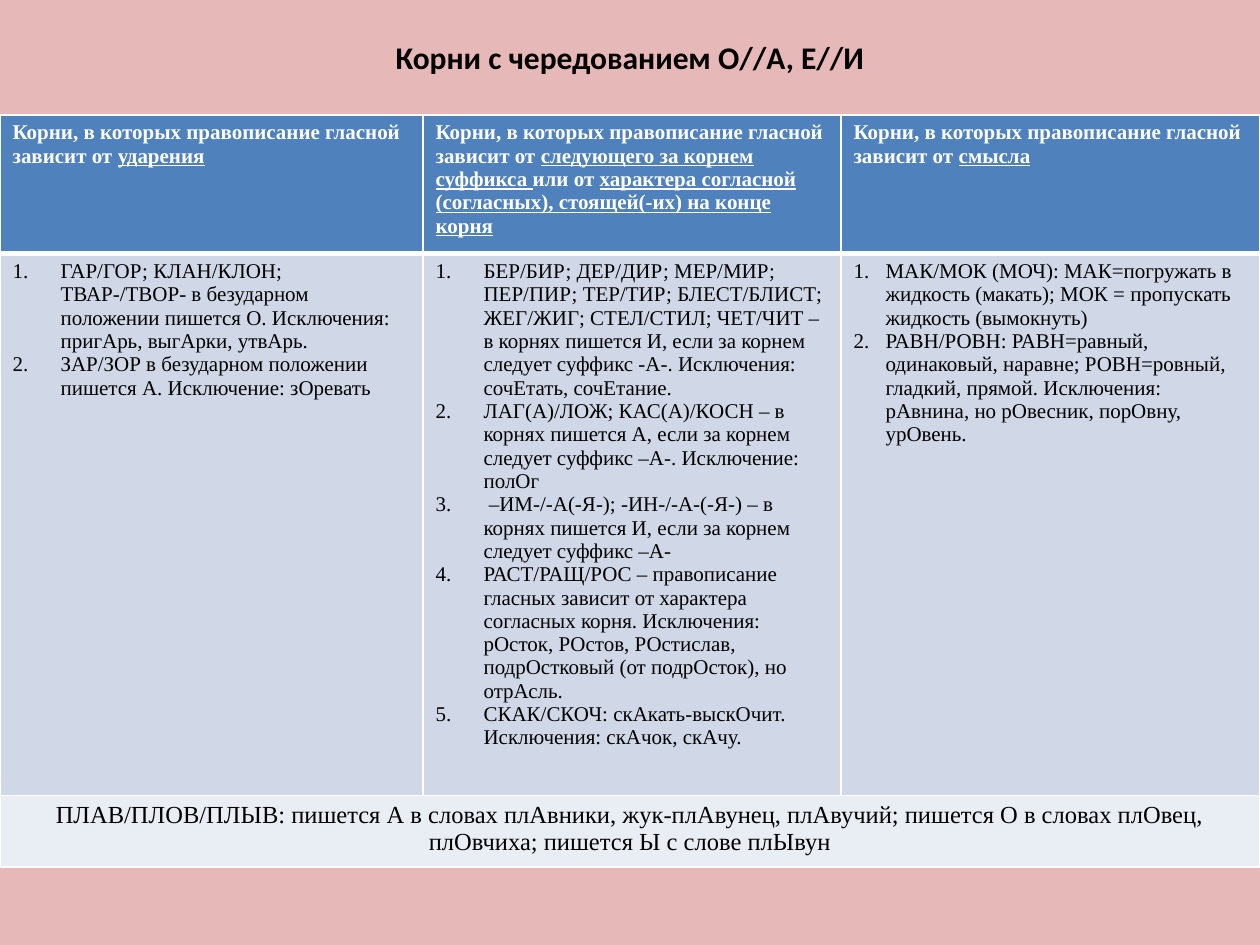
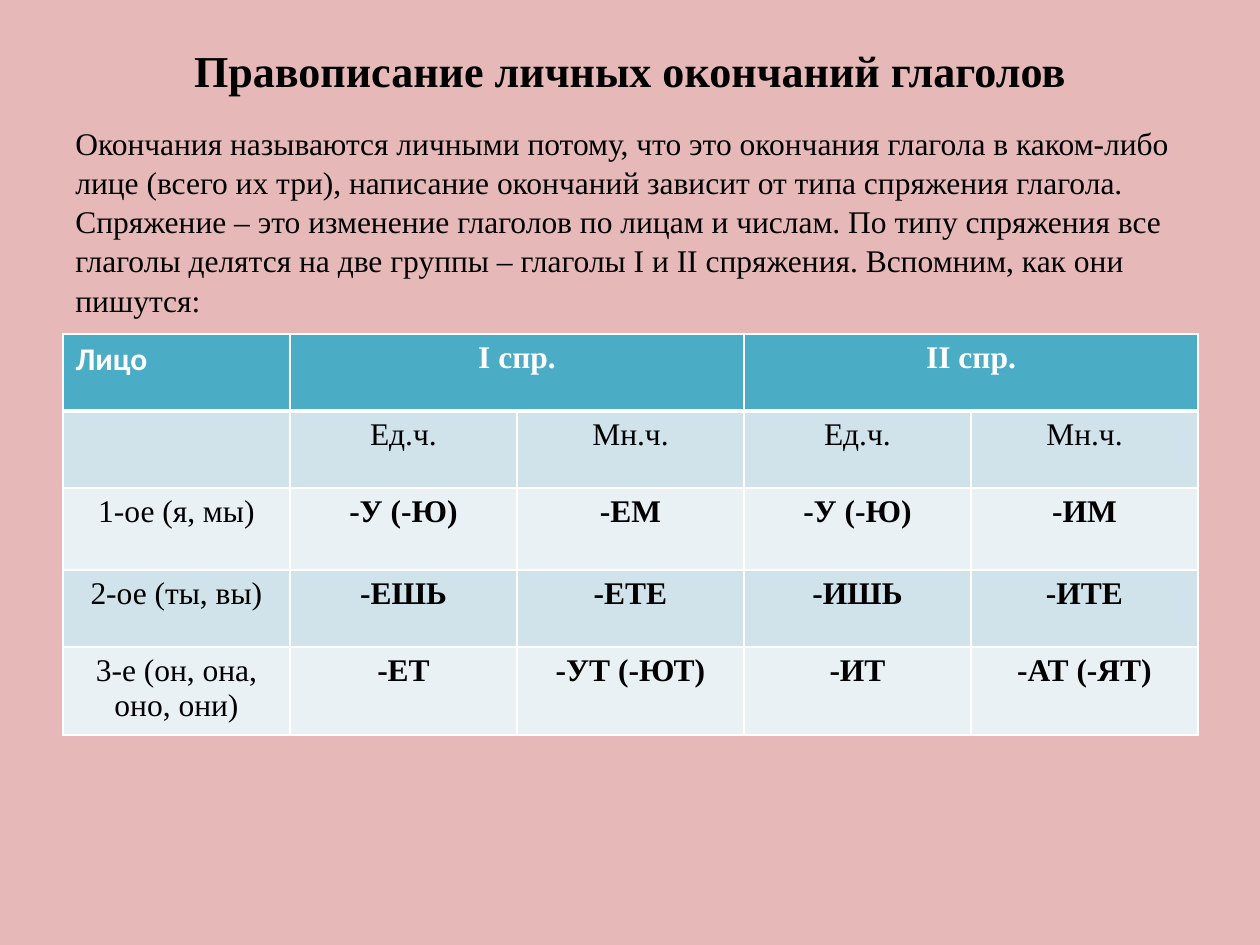
from dataclasses import dataclass
from typing import Any

import lxml.etree
import pptx
import pptx.dml.color
import pptx.enum.text
import pptx.oxml.ns
import pptx.util

RGBColor = pptx.dml.color.RGBColor
PP_ALIGN = pptx.enum.text.PP_ALIGN
MSO_ANCHOR = pptx.enum.text.MSO_ANCHOR
qn = pptx.oxml.ns.qn

PX_PER_INCH = 126
PINK = RGBColor(0xE6, 0xB9, 0xB8)
BLACK = RGBColor(0, 0, 0)
WHITE = RGBColor(0xFF, 0xFF, 0xFF)
BLUE = RGBColor(0x4F, 0x81, 0xBD)
BLUE_MID = RGBColor(0xD0, 0xD8, 0xE8)
BLUE_PALE = RGBColor(0xE9, 0xED, 0xF4)
TEAL = RGBColor(0x4B, 0xAC, 0xC6)
TEAL_MID = RGBColor(0xD0, 0xE3, 0xEA)
TEAL_PALE = RGBColor(0xE9, 0xF1, 0xF5)
SERIF = "Times New Roman"
SANS = "Calibri"
MARGIN, CONTENT_W, TOP = 63, 1134, 38


@dataclass(frozen=True)
class Style:
    size: float
    font: str = SERIF
    color: RGBColor = BLACK
    bold: bool = False
    align: Any = PP_ALIGN.LEFT
    number_indent: int = 0
    line_spacing: float = 1.0


@dataclass(frozen=True)
class Cell:
    paragraphs: tuple[str, ...]
    style: Style
    span: int = 1


@dataclass(frozen=True)
class Row:
    height: int
    fill: RGBColor
    cells: tuple[Cell, ...]


def px(n: int) -> pptx.util.Emu:
    return pptx.util.Emu(round(n * 914400 / PX_PER_INCH))


def write_text(tf: Any, paragraphs: tuple[str, ...], style: Style) -> None:
    """Text between underscores is underlined."""
    for i, text in enumerate(paragraphs):
        p = tf.paragraphs[0] if i == 0 else tf.add_paragraph()
        p.alignment = style.align
        p.line_spacing = style.line_spacing
        p.font.size = pptx.util.Pt(style.size)
        p.font.name = style.font
        p.font.bold = style.bold
        p.font.color.rgb = style.color
        for j, part in enumerate(text.split("_")):
            if part:
                r = p.add_run()
                r.text = part
                if j % 2:
                    r.font.underline = True
        if style.number_indent:
            indent = px(style.number_indent)
            p_pr = p._p.get_or_add_pPr()
            p_pr.set("marL", str(indent))
            p_pr.set("indent", str(-indent))
            number = lxml.etree.Element(qn("a:buAutoNum"), type="arabicPeriod")
            p_pr.insert_element_before(number, "a:tabLst", "a:defRPr", "a:extLst")


def add_text(s: Any, top: int, height: int, text: str, style: Style, anchor: Any) -> None:
    sp = s.shapes.add_textbox(px(MARGIN), px(top), px(CONTENT_W), px(height))
    tf = sp.text_frame
    tf.word_wrap = True
    tf.vertical_anchor = anchor
    write_text(tf, (text,), style)


def add_slide(prs: Any, title: str, title_height: int, style: Style) -> Any:
    s = prs.slides.add_slide(prs.slide_layouts[6])
    s.background.fill.solid()
    s.background.fill.fore_color.rgb = PINK
    add_text(s, TOP, title_height, title, style, MSO_ANCHOR.MIDDLE)
    return s


def set_borders(cell: Any, row_index: int) -> None:
    tc_pr = cell._tc.get_or_add_tcPr()
    widths = {"L": 1, "R": 1, "T": 3 if row_index == 1 else 1, "B": 3 if row_index == 0 else 1}
    for side, width in widths.items():
        ln = lxml.etree.SubElement(tc_pr, qn(f"a:ln{side}"), w=str(pptx.util.Pt(width)))
        fill = lxml.etree.SubElement(ln, qn("a:solidFill"))
        lxml.etree.SubElement(fill, qn("a:srgbClr"), val=str(WHITE))


def add_grid(s: Any, left: int, top: int, widths: list[int], rows: list[Row]) -> None:
    height = sum(row.height for row in rows)
    frame = s.shapes.add_table(
        len(rows), len(widths), px(left), px(top), px(sum(widths)), px(height)
    )
    table = frame.table
    table.first_row = False
    table.horz_banding = False
    for column, width in zip(table.columns, widths):
        column.width = px(width)
    for i, row in enumerate(rows):
        table.rows[i].height = px(row.height)
        for j in range(len(widths)):
            cell = table.cell(i, j)
            set_borders(cell, i)
            cell.fill.solid()
            cell.fill.fore_color.rgb = row.fill
        j = 0
        for item in row.cells:
            cell = table.cell(i, j)
            if item.span > 1:
                cell.merge(table.cell(i, j + item.span - 1))
            write_text(cell.text_frame, item.paragraphs, item.style)
            j += item.span


def build_roots(prs: Any) -> None:
    s = add_slide(
        prs, "Корни с чередованием О//А, Е//И", 38,
        Style(18, SANS, bold=True, align=PP_ALIGN.CENTER),
    )
    head = Style(12, color=WHITE, bold=True)
    wide_list = Style(12, number_indent=48)
    narrow_list = Style(12, number_indent=32)
    lead = "Корни, в которых правописание гласной зависит от "
    criteria = (
        "_ударения_",
        "_следующего за корнем суффикса _или от "
        "_характера согласной (согласных), стоящей(-их) на конце корня_",
        "_смысла_",
    )
    stress = (
        "ГАР/ГОР; КЛАН/КЛОН; ТВАР-/ТВОР- в безударном положении пишется О. "
        "Исключения: пригАрь, выгАрки, утвАрь.",
        "ЗАР/ЗОР в безударном положении пишется А. Исключение: зОревать",
    )
    suffix = (
        "БЕР/БИР; ДЕР/ДИР; МЕР/МИР; ПЕР/ПИР; ТЕР/ТИР; БЛЕСТ/БЛИСТ; ЖЕГ/ЖИГ; "
        "СТЕЛ/СТИЛ; ЧЕТ/ЧИТ – в корнях пишется И, если за корнем следует "
        "суффикс -А-. Исключения: сочЕтать, сочЕтание.",
        "ЛАГ(А)/ЛОЖ; КАС(А)/КОСН – в корнях пишется А, если за корнем следует "
        "суффикс –А-. Исключение: полОг",
        " –ИМ-/-А(-Я-); -ИН-/-А-(-Я-) – в корнях пишется И, если за корнем "
        "следует суффикс –А-",
        "РАСТ/РАЩ/РОС – правописание гласных зависит от характера согласных "
        "корня. Исключения: рОсток, РОстов, РОстислав, подрОстковый "
        "(от подрОсток), но отрАсль.",
        "СКАК/СКОЧ: скАкать-выскОчит. Исключения: скАчок, скАчу.",
    )
    meaning = (
        "МАК/МОК (МОЧ): МАК=погружать в жидкость (макать); "
        "МОК = пропускать жидкость (вымокнуть)",
        "РАВН/РОВН: РАВН=равный, одинаковый, наравне; РОВН=ровный, гладкий, "
        "прямой. Исключения: рАвнина, но рОвесник, порОвну, урОвень.",
    )
    swim = (
        "ПЛАВ/ПЛОВ/ПЛЫВ: пишется А в словах плАвники, жук-плАвунец, плАвучий; "
        "пишется О в словах плОвец, плОвчиха; пишется Ы с слове плЫвун"
    )
    add_grid(s, 0, 115, [423, 418, 419], [
        Row(129, BLUE, tuple(Cell((lead + c,), head) for c in criteria)),
        Row(525, BLUE_MID, (
            Cell(stress, wide_list), Cell(suffix, wide_list), Cell(meaning, narrow_list),
        )),
        Row(67, BLUE_PALE, (Cell((swim,), Style(14, align=PP_ALIGN.CENTER), 3),)),
    ])


def build_endings(prs: Any) -> None:
    s = add_slide(
        prs, "Правописание личных окончаний глаголов", 63,
        Style(25.2, bold=True, align=PP_ALIGN.CENTER),
    )
    add_text(
        s, 116, 200,
        "Окончания называются личными потому, что это окончания глагола в "
        "каком-либо лице (всего их три), написание окончаний зависит от типа "
        "спряжения глагола. Спряжение – это изменение глаголов по лицам и "
        "числам. По типу спряжения все глаголы делятся на две группы – "
        "глаголы I и II спряжения. Вспомним, как они пишутся:",
        Style(18, line_spacing=1.04), MSO_ANCHOR.TOP,
    )
    head = Style(18, color=WHITE, bold=True, align=PP_ALIGN.CENTER)
    plain = Style(18, align=PP_ALIGN.CENTER)
    strong = Style(18, bold=True, align=PP_ALIGN.CENTER)
    persons = (
        (82, TEAL_PALE, "1-ое (я, мы)", ("-У (-Ю)", "-ЕМ", "-У (-Ю)", "-ИМ")),
        (77, TEAL_MID, "2-ое (ты, вы)", ("-ЕШЬ", "-ЕТЕ", "-ИШЬ", "-ИТЕ")),
        (82, TEAL_PALE, "3-е (он, она, оно, они)", ("-ЕТ", "-УТ (-ЮТ)", "-ИТ", "-АТ (-ЯТ)")),
    )
    rows = [
        Row(77, TEAL, (
            Cell(("Лицо",), Style(18, SANS, WHITE, True)),
            Cell(("I спр.",), head, 2),
            Cell(("II спр.",), head, 2),
        )),
        Row(77, TEAL_MID, tuple(
            Cell((t,) if t else (), plain) for t in ("", *("Ед.ч.", "Мн.ч.") * 2)
        )),
    ]
    for height, fill, person, endings in persons:
        cells = (Cell((person,), plain), *(Cell((e,), strong) for e in endings))
        rows.append(Row(height, fill, cells))
    add_grid(s, MARGIN, 334, [227] * 5, rows)


def main() -> None:
    prs = pptx.Presentation()
    prs.slide_width, prs.slide_height = px(1260), px(945)
    build_roots(prs)
    build_endings(prs)
    prs.save("out.pptx")


if __name__ == "__main__":
    main()
